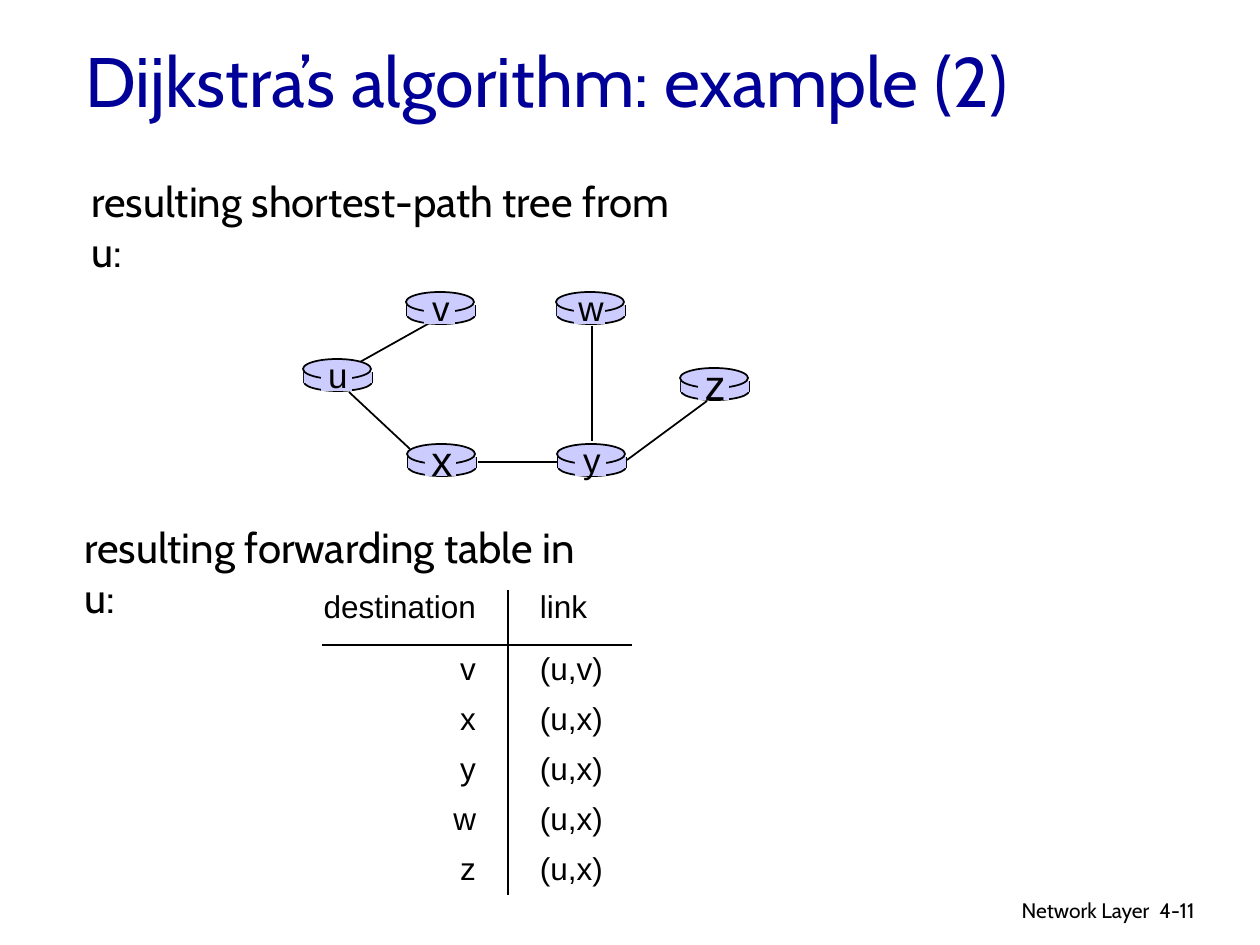
from lxml.etree import SubElement as Sub
from pptx import Presentation
from pptx.dml.color import RGBColor as Rgb
from pptx.enum.shapes import MSO_CONNECTOR as Conn, MSO_SHAPE as Kind
from pptx.enum.text import MSO_ANCHOR as Anchor, MSO_AUTO_SIZE as Auto, PP_ALIGN as Align
from pptx.oxml.ns import qn
from pptx.util import Emu, Pt

SCALE = 914400 / 126
BLACK, NAVY, LILAC = "000000", "000099", "CCCCFF"
SANS, HEAD = "Arial", "Cabin"
NODES = {
    "u": (303, 359, 20), "x": (407, 444, 24), "v": (406, 292, 20),
    "w": (556, 292, 20), "y": (557, 444, 20), "z": (680, 368, 24),
}
LINKS = [
    (360, 362, 435, 320), (592, 326, 592, 441), (627, 460, 707, 401),
    (558, 462, 478, 462), (410, 449, 349, 392),
]
ROUTES = [
    ("destination", "link"), ("v", "(u,v)"), ("x", "(u,x)"),
    ("y", "(u,x)"), ("w", "(u,x)"), ("z", "(u,x)"),
]


def px(*nums):
    """Turn pixel lengths into EMU."""
    return [Emu(round(n * SCALE)) for n in nums]


def paint(hue):
    """Return the colour of a hex string."""
    return Rgb.from_string(hue)


def apply(item, form):
    """Set each attribute named in a dict."""
    for name, value in form.items():
        setattr(item, name, value)


def write(frame, text, size, face=SANS, hue=BLACK, align=Align.LEFT, **form):
    """Fill a text frame with one formatted line."""
    apply(frame, {"word_wrap": True, **form})
    para = frame.paragraphs[0]
    para.alignment = align
    run = para.add_run()
    run.text = text
    apply(run.font, {"size": Pt(size), "name": face})
    run.font.color.rgb = paint(hue)


def label(slide, box, text, size, **form):
    """Add a text box."""
    write(slide.shapes.add_textbox(*px(*box)).text_frame, text, size, **form)


def rule(slide, ends):
    """Add a thin black line."""
    line = slide.shapes.add_connector(Conn.STRAIGHT, *px(*ends))
    line.line.width = Pt(1)
    line.line.color.rgb = paint(BLACK)
    Sub(line._element.spPr, qn("a:effectLst"))


def solid(slide, kind, box, edge=False):
    """Add a lilac shape, outlined if asked."""
    shape = slide.shapes.add_shape(kind, *px(*box))
    shape.shadow.inherit = False
    shape.fill.solid()
    shape.fill.fore_color.rgb = paint(LILAC)
    if edge:
        shape.line.width = Pt(1)
        shape.line.color.rgb = paint(BLACK)
    else:
        shape.line.fill.background()


def router(slide, left, top, name, size):
    """Draw a router disc with its letter."""
    solid(slide, Kind.OVAL, (left + 1, top + 14, 68, 18), True)
    for side in (left + 1, left + 69):
        rule(slide, (side, top + 13, side, top + 24))
    solid(slide, Kind.RECTANGLE, (left + 1, top + 13, 68, 11))
    solid(slide, Kind.OVAL, (left, top, 68, 20), True)
    solid(slide, Kind.RECTANGLE, (left + 18, top + 3, 31, 29))
    high = 54 if size == 20 else 63
    label(slide, (left + 10, top + 15 - high // 2, 50, high), name, size,
          align=Align.CENTER, word_wrap=False)


def tree(slide):
    """Draw the links, then the routers."""
    for ends in LINKS:
        rule(slide, ends)
    for name, (left, top, size) in NODES.items():
        router(slide, left, top, name, size)


def border(cell, sides):
    """Show only the given sides of a cell."""
    props = cell._tc.get_or_add_tcPr()
    for side in "LRTB":
        line = Sub(props, qn(f"a:ln{side}"), w=str(Pt(0.75)))
        if side in sides:
            fill = Sub(line, qn("a:solidFill"))
            Sub(fill, qn("a:srgbClr"), val=BLACK)
        else:
            Sub(line, qn("a:noFill"))


def grid(slide, left, top, wide, high):
    """Build the forwarding table."""
    head, cols = 55, (186, wide - 186)
    step = (high - head) // (len(ROUTES) - 1)
    table = slide.shapes.add_table(len(ROUTES), 2, *px(left, top, wide, high)).table
    apply(table, {"first_row": False, "horz_banding": False})
    for col, size in zip(table.columns, px(*cols)):
        col.width = size
    for r, texts in enumerate(ROUTES):
        table.rows[r].height = px(step if r else head)[0]
        for c, text in enumerate(texts):
            cell = table.cell(r, c)
            border(cell, "RL"[c] + {0: "B", 1: "T"}.get(r, ""))
            cell.fill.background()
            near, far = px(0, 32)
            apply(cell, {
                "margin_left": far if c else near,
                "margin_right": near if c else far,
                "margin_top": near, "margin_bottom": near,
                "vertical_anchor": Anchor.MIDDLE if r else Anchor.TOP,
            })
            write(cell.text_frame, text, 18,
                  align=Align.LEFT if c else Align.RIGHT)


def title(slide, left, top, wide, high):
    """Place and fill the title."""
    shape = slide.shapes.title
    apply(shape, dict(zip(("left", "top", "width", "height"),
                          px(left, top, wide, high))))
    write(shape.text_frame, "Dijkstra’s algorithm: example (2)", 40, HEAD, NAVY,
          vertical_anchor=Anchor.MIDDLE, auto_size=Auto.NONE)


def foot(slide, left, top, wide, high):
    """Write the chapter name and page number."""
    label(slide, (left, top, wide - 78, high), "Network Layer", 12,
          face=HEAD, align=Align.RIGHT)
    label(slide, (left + wide - 93, top, 93, high), "4-11", 12, face=HEAD)


def main():
    """Build and save the slide."""
    deck = Presentation()
    deck.slide_width, deck.slide_height = px(1260, 945)
    slide = deck.slides.add_slide(deck.slide_layouts[5])
    foot(slide, 762, 891, 478, 39)
    title(slide, 73, 21, 1071, 117)
    tree(slide)
    label(slide, (79, 169, 630, 63), "resulting shortest-path tree from u:", 24, face=HEAD)
    grid(slide, 322, 590, 310, 305)
    label(slide, (72, 515, 544, 63), "resulting forwarding table in u:", 24, face=HEAD)
    deck.save("out.pptx")


if __name__ == "__main__":
    main()
